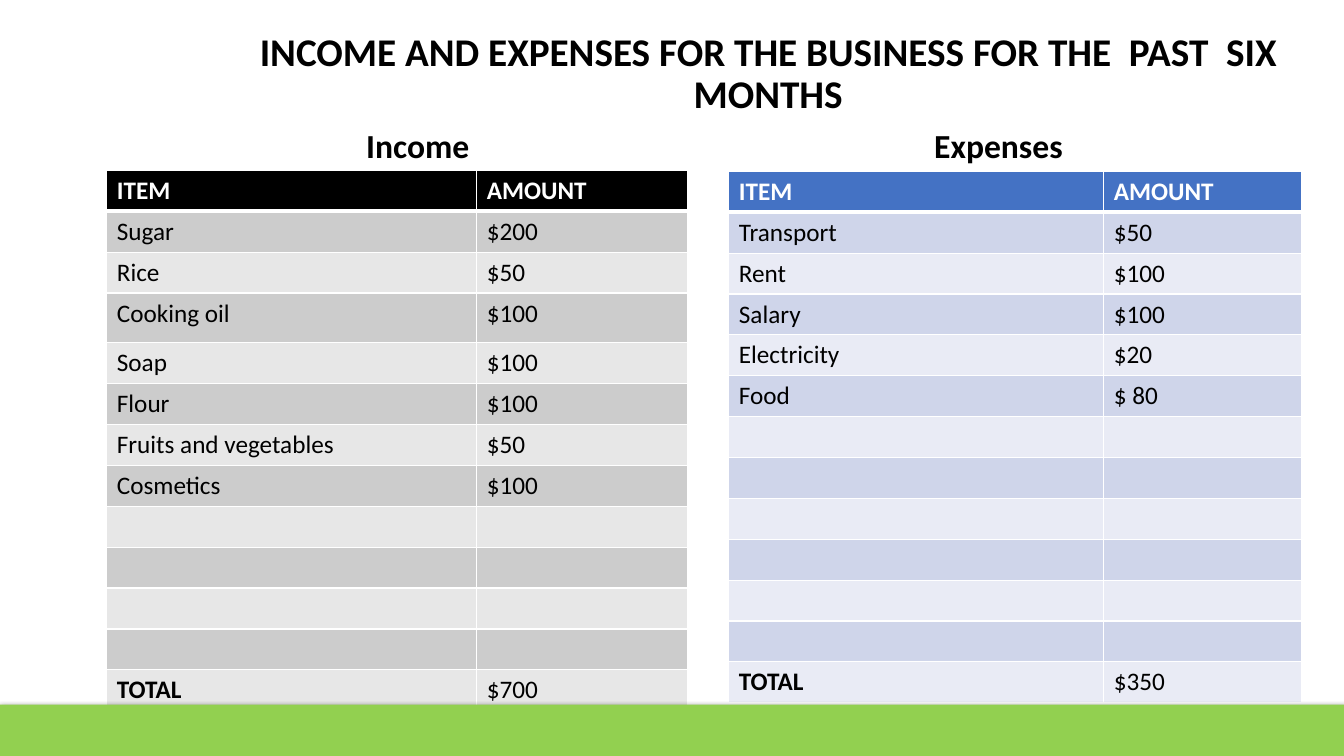
from lxml import etree
from pptx import Presentation
from pptx import util as u
from pptx.dml.color import RGBColor
from pptx.enum import shapes, text
from pptx.oxml import ns

Pt = u.Pt

# Content
TITLE = "INCOME AND EXPENSES FOR THE BUSINESS FOR THE  PAST  SIX MONTHS"
HEADER = ("ITEM", "AMOUNT")
ROWS = 13
LEDGERS = [
    {
        "heading": "Income", "heading_left": 105.8, "left": 76.3, "top": 121.7,
        "widths": (264.2, 150.5), "tall_rows": {3: 35.6},
        "colours": ("black", "grey", "light grey"),
        "entries": [("Sugar", "$200"), ("Rice", "$50"), ("Cooking oil", "$100"),
                    ("Soap", "$100"), ("Flour", "$100"),
                    ("Fruits and vegetables", "$50"), ("Cosmetics", "$100")],
        "total": "$700",
    },
    {
        "heading": "Expenses", "heading_left": 520.6, "left": 520.6, "top": 122.4,
        "widths": (267.8, 141.1), "tall_rows": {},
        "colours": ("blue", "pale blue", "light blue"),
        "entries": [("Transport", "$50"), ("Rent", "$100"), ("Salary", "$100"),
                    ("Electricity", "$20"), ("Food", "$ 80")],
        "total": "$350",
    },
]
COLOURS = {
    "black": "000000", "white": "FFFFFF", "green": "92D050",
    "grey": "CCCCCC", "light grey": "E7E7E7",
    "blue": "4472C4", "pale blue": "CFD5EA", "light blue": "E9EBF5",
}
WIDTH, HEIGHT = 960, 540
ROW_HEIGHT = 29.2
BAND_TOP = 503.3


def rgb(name):
    return RGBColor.from_string(COLOURS[name])


def write(paragraph, words, size, bold=True, colour="black", **layout):
    run = paragraph.add_run()
    run.text = words
    for key, value in {"name": "Calibri", "size": Pt(size), "bold": bold}.items():
        setattr(run.font, key, value)
    run.font.color.rgb = rgb(colour)
    for key, value in layout.items():
        setattr(paragraph, key, value)


def add_border(cell, side, points):
    line = etree.SubElement(cell._tc.get_or_add_tcPr(), ns.qn(f"a:ln{side}"),
                            w=str(Pt(points)))
    fill = etree.SubElement(line, ns.qn("a:solidFill"))
    etree.SubElement(fill, ns.qn("a:srgbClr"), val=COLOURS["white"])


def add_ledger(slide, ledger):
    # Heading above the table
    heading = slide.shapes.add_textbox(Pt(ledger["heading_left"]), Pt(76.3),
                                       Pt(385.2), Pt(45.4)).text_frame
    heading.word_wrap = True
    heading.vertical_anchor = text.MSO_ANCHOR.BOTTOM
    write(heading.paragraphs[0], ledger["heading"], 24, line_spacing=0.9,
          space_before=Pt(10), alignment=text.PP_ALIGN.CENTER)

    # Header, entries, spare rows and total
    spare = [("", "")] * (ROWS - 2 - len(ledger["entries"]))
    lines = [HEADER, *ledger["entries"], *spare, ("TOTAL", ledger["total"])]
    heights = [ledger["tall_rows"].get(r, ROW_HEIGHT) for r in range(ROWS)]
    table = slide.shapes.add_table(
        ROWS, len(HEADER), Pt(ledger["left"]), Pt(ledger["top"]),
        Pt(sum(ledger["widths"])), Pt(sum(heights))).table
    for column, width in zip(table.columns, ledger["widths"]):
        column.width = Pt(width)

    header_fill, odd_fill, even_fill = ledger["colours"]
    for r, line in enumerate(lines):
        table.rows[r].height = Pt(heights[r])
        fill = header_fill if r == 0 else odd_fill if r % 2 else even_fill
        for c, words in enumerate(line):
            cell = table.cell(r, c)
            borders = {"L": 1, "R": 1, "T": 3 if r == 1 else 1, "B": 3 if r == 0 else 1}
            for side, points in borders.items():
                add_border(cell, side, points)
            cell.fill.solid()
            cell.fill.fore_color.rgb = rgb(fill)
            paragraph = cell.text_frame.paragraphs[0]
            paragraph.font.size = Pt(18)
            if words:
                write(paragraph, words, 18, bold=r == 0 or words == "TOTAL",
                      colour="white" if r == 0 else "black")


def add_band(slide):
    band = slide.shapes.add_shape(shapes.MSO_SHAPE.RECTANGLE, 0, Pt(BAND_TOP),
                                  Pt(WIDTH), Pt(HEIGHT - BAND_TOP))
    band.fill.solid()
    band.fill.fore_color.rgb = rgb("green")
    band.line.fill.background()
    # Soft shadow straight down
    band.shadow.inherit = False
    effects = band._element.spPr.find(ns.qn("a:effectLst"))
    shadow = etree.SubElement(effects, ns.qn("a:outerShdw"), blurRad=str(Pt(4.5)),
                              dist=str(Pt(1.5)), dir="5400000", rotWithShape="0")
    tint = etree.SubElement(shadow, ns.qn("a:srgbClr"), val=COLOURS["black"])
    etree.SubElement(tint, ns.qn("a:alpha"), val="63000")


def main():
    deck = Presentation()
    deck.slide_width, deck.slide_height = Pt(WIDTH), Pt(HEIGHT)
    slide = deck.slides.add_slide(deck.slide_layouts[5])

    # Title
    title = slide.shapes.title
    place = {"left": 154.1, "top": 25.2, "width": 789.1, "height": 56.9}
    for key, value in place.items():
        setattr(title, key, Pt(value))
    title.text_frame.word_wrap = True
    title.text_frame.auto_size = text.MSO_AUTO_SIZE.NONE
    title.text_frame.vertical_anchor = text.MSO_ANCHOR.MIDDLE
    write(title.text_frame.paragraphs[0], TITLE, 28, line_spacing=0.9,
          alignment=text.PP_ALIGN.CENTER)

    for ledger in LEDGERS:
        add_ledger(slide, ledger)
    add_band(slide)
    deck.save("out.pptx")


if __name__ == "__main__":
    main()
